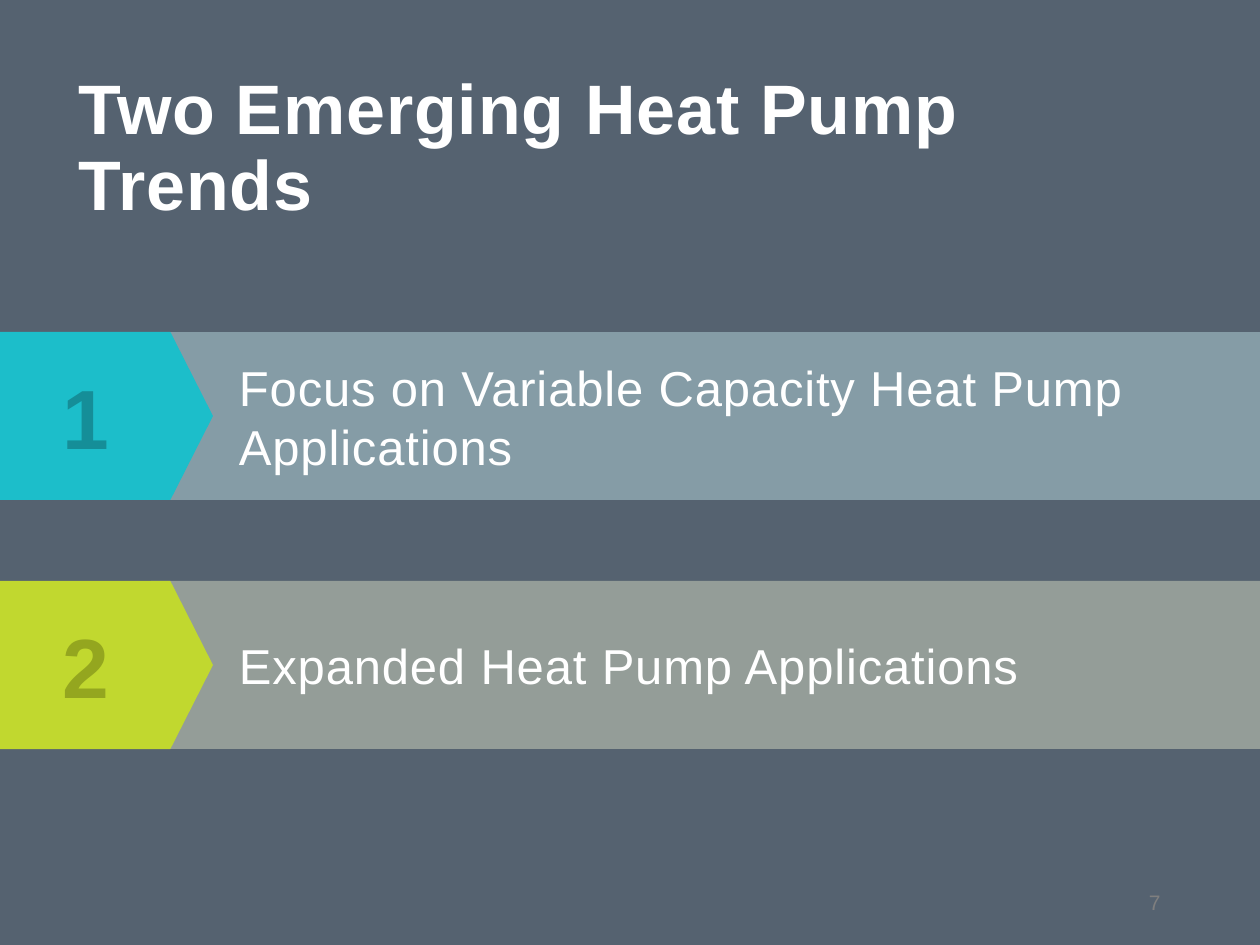
from dataclasses import dataclass

from lxml import etree
from pptx import Presentation
from pptx import util as u
from pptx.dml.color import RGBColor
from pptx.enum import shapes, text
from pptx.oxml import ns

PX = u.Inches(1) / 126


@dataclass(frozen=True)
class Theme:
    """Colours, font and type sizes of the slide."""

    font: str = "Arial"
    background: str = "556270"
    light: str = "FFFFFF"
    muted: str = "7F7F7F"
    title_size: int = 40
    trend_size: int = 28
    number_size: int = 48
    page_size: int = 12
    tracking: int = 50


THEME = Theme()
TRENDS = [
    ("1", "Focus on Variable Capacity Heat Pump Applications", "1CBECA", "158E98", "CEF5F8"),
    ("2", "Expanded Heat Pump Applications", "C1D82F", "94A61F", "F3F7D5"),
]


def px(length):
    """Turn px into EMU."""
    return u.Emu(round(length * PX))


def paint(shape, colour, opacity=100):
    """Give a shape a flat fill without line or shadow."""
    shape.shadow.inherit = False
    shape.fill.solid()
    shape.fill.fore_color.rgb = RGBColor.from_string(colour)
    shape.line.fill.background()
    if opacity < 100:
        tint = shape.fill._xPr.find(".//" + ns.qn("a:srgbClr"))
        etree.SubElement(tint, ns.qn("a:alpha"), val=str(opacity * 1000))


def write(shape, words, size, colour, bold=False, tracking=0,
          anchor=text.MSO_ANCHOR.MIDDLE, align=text.PP_ALIGN.LEFT):
    """Write one paragraph into a shape and return it."""
    frame = shape.text_frame
    frame.word_wrap = True
    frame.auto_size = text.MSO_AUTO_SIZE.NONE
    frame.vertical_anchor = anchor
    paragraph = frame.paragraphs[0]
    paragraph.alignment = align
    run = paragraph.add_run()
    run.text = words
    run.font.name = THEME.font
    run.font.size = u.Pt(size)
    run.font.bold = bold
    run.font.color.rgb = RGBColor.from_string(colour)
    if tracking:
        run.font._element.set("spc", str(tracking))
    return paragraph


def add_title(slide, left, top, width, height):
    """Place and format the slide title."""
    title = slide.shapes.title
    title.left, title.top, title.width, title.height = map(px, (left, top, width, height))
    heading = write(title, "Two Emerging Heat Pump Trends", THEME.title_size, THEME.light,
                    True, THEME.tracking, text.MSO_ANCHOR.BOTTOM)
    heading.line_spacing = 0.9


def add_trend(slide, left, top, width, height, trend):
    """Draw a numbered tag and its translucent band."""
    number, words, tag_colour, number_colour, band_colour = trend
    indent, tag_width = 151, 213
    band = slide.shapes.add_shape(shapes.MSO_SHAPE.RECTANGLE, px(left + indent), px(top),
                                  px(width - indent), px(height))
    paint(band, band_colour, 40)
    band.text_frame.margin_left = px(88)
    write(band, words, THEME.trend_size, THEME.light, tracking=THEME.tracking)

    shift = (tag_width - height) / 2
    tag = slide.shapes.add_shape(shapes.MSO_SHAPE.FLOWCHART_OFFPAGE_CONNECTOR,
                                 px(left + shift), px(top - shift), px(height), px(tag_width))
    tag.rotation = 270
    paint(tag, tag_colour)

    label = slide.shapes.add_textbox(px(left + 50), px(top), px(69), px(height))
    write(label, number, THEME.number_size, number_colour, True)


def add_page_number(slide, left, top, width, height):
    """Write the page number at the right of its box."""
    page = slide.shapes.add_textbox(*map(px, (left, top, width, height)))
    write(page, "7", THEME.page_size, THEME.muted, align=text.PP_ALIGN.RIGHT)


def main():
    """Build and save the slide."""
    deck = Presentation()
    deck.slide_width, deck.slide_height = px(1260), px(945)
    slide = deck.slides.add_slide(deck.slide_layouts[5])
    slide.background.fill.solid()
    slide.background.fill.fore_color.rgb = RGBColor.from_string(THEME.background)
    add_title(slide, 66, 62, 1086, 170)
    for row, trend in enumerate(TRENDS):
        add_trend(slide, 0, 332 + 249 * row, 1260, 168, trend)
    add_page_number(slide, 1073, 877, 100, 50)
    deck.save("out.pptx")


if __name__ == "__main__":
    main()
